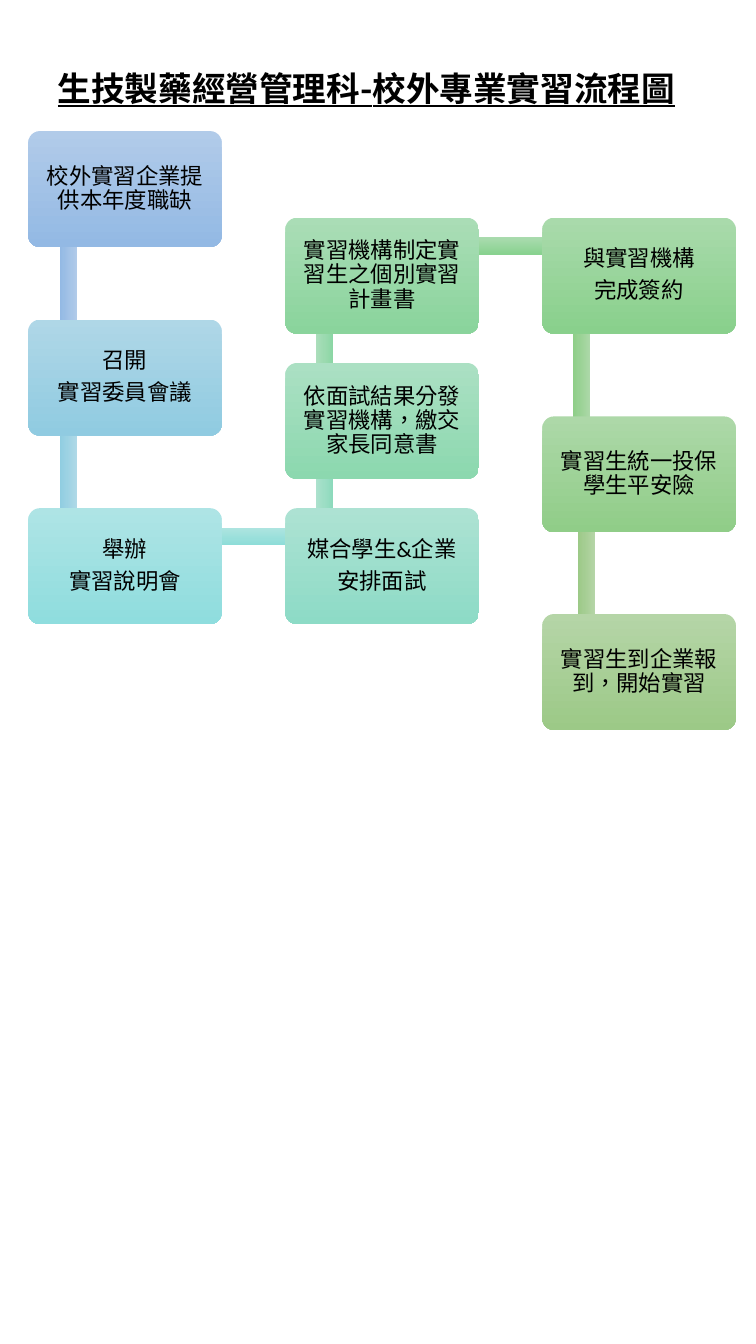
import dataclasses
import pptx
import pptx.util
import pptx.dml.color
import pptx.enum.shapes
import pptx.enum.text
import pptx.oxml.ns
import lxml.etree

Inches = pptx.util.Inches
Pt = pptx.util.Pt
SHAPE = pptx.enum.shapes.MSO_SHAPE
CENTER = pptx.enum.text.PP_ALIGN.CENTER
MIDDLE = pptx.enum.text.MSO_ANCHOR.MIDDLE


@dataclasses.dataclass(frozen=True)
class Theme:
    """Fonts, type sizes and colours of the slide."""
    ink: str = "000000"
    head: str = "Noto Sans CJK SC"
    body: str = "Calibri"
    big: int = 24
    small: int = 16
    boxes: tuple = (
        ("B1CBE9", "93B9E4"), ("AFD7E7", "90CBE1"), ("AEE4E5", "8FDDDE"),
        ("ADE2D3", "8DDBC6"), ("ABE0C3", "8CD8AF"), ("AADDB6", "8AD49C"),
        ("A9DAAB", "89D08C"), ("ADD8A8", "90CD88"), ("B5D5A7", "9CC987"))
    bars: tuple = (
        ("B1CBE9", "93B9E4"), ("AFD9E7", "90CDE1"), ("ADE4E0", "8EDDD8"),
        ("ACE1CD", "8CDABC"), ("ABDEBB", "8BD6A4"), ("A9DBAE", "89D290"),
        ("ACD8A8", "8ECE88"), ("B5D5A7", "9CC987"))


THEME = Theme()
WIDE, HIGH = 1.92, 1.15
THICK, SHORT, LONG = 0.17, 1.43, 2.54
LEFT, MID, RIGHT = 0.28, 2.83, 5.38

STEPS = (
    (LEFT, 1.3, ("校外實習企業提供本年度職缺",)),
    (LEFT, 3.17, ("召開", "實習委員會議")),
    (LEFT, 5.04, ("舉辦", "實習說明會")),
    (MID, 5.04, ("媒合學生&企業", "安排面試")),
    (MID, 3.6, ("依面試結果分發實習機構，繳交家長同意書",)),
    (MID, 2.16, ("實習機構制定實習生之個別實習計畫書",)),
    (RIGHT, 2.16, ("與實習機構", "完成簽約")),
    (RIGHT, 4.13, ("實習生統一投保學生平安險",)),
    (RIGHT, 6.09, ("實習生到企業報到，開始實習",)),
)
LINKS = (
    (0.68, 3.17, SHORT, 90), (0.68, 4.61, SHORT, 90),
    (1.95, 5.32, LONG, 0),
    (3.22, 4.61, SHORT, 270), (3.22, 3.17, SHORT, 270),
    (4.49, 2.44, LONG, 0),
    (5.77, 3.56, SHORT, 90), (5.82, 5.41, SHORT, 90),
)


def add_run(para, text, size, face):
    """Add one run and return its font."""
    run = para.add_run()
    run.text = text
    run._r.get_or_add_rPr().set("lang", "zh-TW")
    font = run.font
    font.size = Pt(size)
    font.name = face
    font.color.rgb = pptx.dml.color.RGBColor.from_string(THEME.ink)
    return font


def add_block(slide, kind, x, y, wide, high, tints):
    """Add a borderless shape that shades from top to bottom."""
    shape = slide.shapes.add_shape(
        kind, Inches(x), Inches(y), Inches(wide), Inches(high))
    shape.shadow.inherit = False
    shape.line.fill.background()
    shape.fill.gradient()
    shape.fill.gradient_angle = 270
    for stop, tint in zip(shape.fill.gradient_stops, tints):
        stop.color.rgb = pptx.dml.color.RGBColor.from_string(tint)
    return shape


def add_bar(slide, link, tints):
    """Add the bar between two steps, placed by its centre."""
    x, y, size, turn = link
    bar = add_block(slide, SHAPE.RECTANGLE, x - size / 2, y - THICK / 2,
                    size, THICK, tints)
    bar.rotation = turn


def add_step(slide, step, tints):
    """Add one rounded step box with its lines."""
    x, y, lines = step
    box = add_block(slide, SHAPE.ROUNDED_RECTANGLE, x, y, WIDE, HIGH, tints)
    box.adjustments[0] = 0.1
    frame = box.text_frame
    frame.word_wrap = True
    frame.vertical_anchor = MIDDLE
    frame.margin_left = frame.margin_right = Inches(0.07)
    frame.margin_top = frame.margin_bottom = Inches(0.07)
    for index, line in enumerate(lines):
        para = frame.add_paragraph() if index else frame.paragraphs[0]
        para.alignment = CENTER
        para.line_spacing = 0.9
        para.space_after = Pt(THEME.small * 0.35)
        add_run(para, line, THEME.small, THEME.body)


def set_title(slide, text):
    """Place and format the title."""
    title = slide.shapes.title
    title.left, title.top = Inches(0.42), Inches(0.62)
    title.width, title.height = Inches(6.43), Inches(0.5)
    frame = title.text_frame
    frame.word_wrap = True
    frame.auto_size = pptx.enum.text.MSO_AUTO_SIZE.NONE
    frame.vertical_anchor = MIDDLE
    para = frame.paragraphs[0]
    para.alignment = CENTER
    font = add_run(para, text, THEME.big, THEME.head)
    font.bold = font.underline = True
    latin = para.runs[0]._r.rPr.find(pptx.oxml.ns.qn("a:latin"))
    east = lxml.etree.Element(pptx.oxml.ns.qn("a:ea"), typeface=THEME.head)
    latin.addnext(east)


def main():
    """Build the flow chart slide."""
    deck = pptx.Presentation()
    deck.slide_width, deck.slide_height = Inches(7.5), Inches(13.33)
    slide = deck.slides.add_slide(deck.slide_layouts[5])
    set_title(slide, "生技製藥經營管理科-校外專業實習流程圖")
    for link, tints in zip(LINKS, THEME.bars):
        add_bar(slide, link, tints)
    for step, tints in zip(STEPS, THEME.boxes):
        add_step(slide, step, tints)
    deck.save("out.pptx")


if __name__ == "__main__":
    main()
